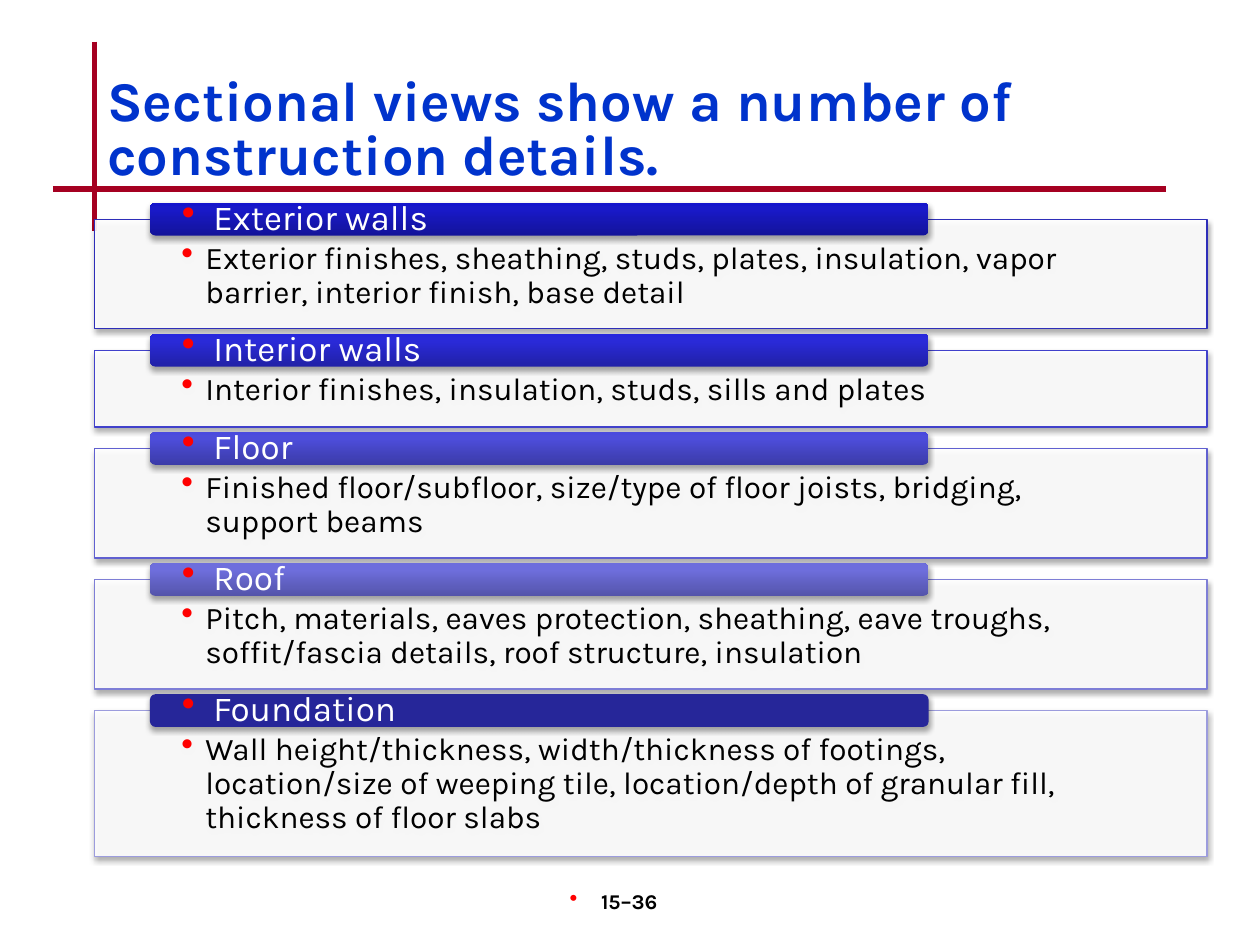
from lxml import etree
from pptx import Presentation
from pptx.dml.color import RGBColor
from pptx.enum.shapes import MSO_CONNECTOR, MSO_SHAPE
from pptx.enum.text import MSO_ANCHOR, PP_ALIGN
from pptx.oxml import parse_xml
from pptx.oxml.ns import nsdecls, qn
from pptx.util import Inches, Pt

STRAIGHT = MSO_CONNECTOR.STRAIGHT
RECTANGLE, ROUNDED = MSO_SHAPE.RECTANGLE, MSO_SHAPE.ROUNDED_RECTANGLE
TOP, MIDDLE, BOTTOM = MSO_ANCHOR.TOP, MSO_ANCHOR.MIDDLE, MSO_ANCHOR.BOTTOM
LEFT, CENTER = PP_ALIGN.LEFT, PP_ALIGN.CENTER

FONT = "Karla"
BLACK = RGBColor(0x00, 0x00, 0x00)
WHITE = RGBColor(0xFF, 0xFF, 0xFF)
TITLE_BLUE = RGBColor(0x00, 0x33, 0xCC)
RULE_RED = RGBColor(0xA5, 0x00, 0x21)
BULLET_RED = RGBColor(0xFF, 0x00, 0x00)

PANEL_LEFT, PANEL_TOP, PANEL_WIDTH, PANEL_GAP = 0.75, 1.74, 8.83, 0.17
HEADER_LEFT, HEADER_WIDTH, HEADER_HEIGHT = 1.19, 6.18, 0.26

# heading, details, panel height, panel outline, header fill (from bottom to top)
SECTIONS = [
    ("Exterior walls",
     "Exterior finishes, sheathing, studs, plates, insulation, vapor barrier, "
     "interior finish, base detail",
     0.87, RGBColor(0x2E, 0x2E, 0xB9), ("13139A", "1919C8", "1515CC")),
    ("Interior walls",
     "Interior finishes, insulation, studs, sills and plates",
     0.61, RGBColor(0x41, 0x41, 0xCB), ("2121A7", "2A2AD9", "2727DD")),
    ("Floor",
     "Finished floor/subfloor, size/type of floor joists, bridging, support beams",
     0.87, RGBColor(0x60, 0x60, 0xD0), ("3B3BA8", "4D4DDA", "4A4ADE")),
    ("Roof",
     "Pitch, materials, eaves protection, sheathing, eave troughs, "
     "soffit/fascia details, roof structure, insulation",
     0.87, RGBColor(0x7E, 0x7E, 0xD6), ("5454AA", "6E6EDC", "6C6CDF")),
    ("Foundation",
     "Wall height/thickness, width/thickness of footings, location/size of "
     "weeping tile, location/depth of granular fill, thickness of floor slabs",
     1.16, RGBColor(0x9C, 0x9C, 0xDD), ("262699",) * 3),
]


class SlideBuilder:
    def __init__(self, slide, font):
        self.slide = slide
        self.font = font

    def set_text(self, shape, text, size, color, bold=False, align=LEFT, anchor=TOP,
                 insets=(0.1, 0.05, 0.1, 0.05), spacing=1.0, indent=None):
        """Fill a shape with one paragraph; an indent makes it a bullet."""
        frame = shape.text_frame
        frame.word_wrap = True
        frame.vertical_anchor = anchor
        (frame.margin_left, frame.margin_top,
         frame.margin_right, frame.margin_bottom) = map(Inches, insets)
        frame.text = text
        paragraph = frame.paragraphs[0]
        paragraph.alignment = align
        paragraph.line_spacing = spacing
        paragraph.space_before = Pt(0)
        if indent:
            self.add_bullet(paragraph, indent)
        font = paragraph.runs[0].font
        font.name, font.size, font.bold = self.font, Pt(size), bold
        font.color.rgb = color

    def add_bullet(self, paragraph, indent):
        properties = paragraph._p.get_or_add_pPr()
        properties.set("marL", str(Inches(indent)))
        properties.set("indent", str(-Inches(indent)))
        color = etree.SubElement(properties, qn("a:buClr"))
        etree.SubElement(color, qn("a:srgbClr"), val=str(BULLET_RED))
        etree.SubElement(properties, qn("a:buSzPct"), val="110000")
        etree.SubElement(properties, qn("a:buChar"), char="•")

    def add_title(self, text, left, top, width, height):
        title = self.slide.shapes.title
        title.left, title.top = Inches(left), Inches(top)
        title.width, title.height = Inches(width), Inches(height)
        self.set_text(title, text, 32, TITLE_BLUE, bold=True, anchor=BOTTOM,
                      spacing=0.8)

    def add_rule(self, x1, y1, x2, y2):
        rule = self.slide.shapes.add_connector(
            STRAIGHT, Inches(x1), Inches(y1), Inches(x2), Inches(y2))
        rule.line.color.rgb = RULE_RED
        rule.line.width = Pt(3)
        etree.SubElement(rule._element.spPr, qn("a:effectLst"))

    def add_box(self, kind, left, top, width, height):
        return self.slide.shapes.add_shape(
            kind, Inches(left), Inches(top), Inches(width), Inches(height))

    def cast_shadow(self, shape):
        """Add a soft shadow below; call after fill and line are set."""
        shape._element.spPr.append(parse_xml(
            f'<a:effectLst {nsdecls("a")}>'
            f'<a:outerShdw blurRad="{Pt(3.1)}" dist="{Pt(1.8)}" dir="5400000" '
            'rotWithShape="0"><a:srgbClr val="000000"><a:alpha val="35000"/>'
            '</a:srgbClr></a:outerShdw></a:effectLst>'))

    def add_panel(self, details, top, height, outline):
        panel = self.add_box(RECTANGLE, PANEL_LEFT, top, PANEL_WIDTH, height)
        panel.fill.solid()
        panel.fill.fore_color.rgb = WHITE
        fill_color = panel._element.spPr.find(qn("a:solidFill"))[0]
        etree.SubElement(fill_color, qn("a:alpha"), val="90000")
        panel.line.color.rgb = outline
        panel.line.width = Pt(0.75)
        self.cast_shadow(panel)
        self.set_text(panel, details, 18, BLACK, insets=(0.69, 0.18, 0.69, 0.14),
                      spacing=0.9, indent=0.19)

    def add_header(self, heading, middle, shades):
        header = self.add_box(ROUNDED, HEADER_LEFT, middle - HEADER_HEIGHT / 2,
                              HEADER_WIDTH, HEADER_HEIGHT)
        if len(set(shades)) == 1:
            header.fill.solid()
            header.fill.fore_color.rgb = RGBColor.from_string(shades[0])
        else:
            stops = "".join(
                f'<a:gs pos="{position}"><a:srgbClr val="{shade}"/></a:gs>'
                for position, shade in zip((0, 80000, 100000), shades))
            header._element.spPr.append(parse_xml(
                f'<a:gradFill {nsdecls("a")} rotWithShape="1"><a:gsLst>{stops}'
                '</a:gsLst><a:lin ang="16200000" scaled="0"/></a:gradFill>'))
        header.line.fill.background()
        self.cast_shadow(header)
        self.set_text(header, heading, 20, WHITE, anchor=MIDDLE,
                      insets=(0.24, 0, 0.24, 0), spacing=0.9, indent=0.25)

    def add_page_number(self, text, left, top, width, height):
        box = self.slide.shapes.add_textbox(
            Inches(left), Inches(top), Inches(width), Inches(height))
        self.set_text(box, text, 12, BLACK, bold=True, align=CENTER,
                      insets=(0.1, 0.05, 0.28, 0.05), indent=0.25)


def main():
    presentation = Presentation()
    presentation.slide_width, presentation.slide_height = Inches(10), Inches(7.5)
    title_only = presentation.slide_layouts[5]
    builder = SlideBuilder(presentation.slides.add_slide(title_only), FONT)

    builder.add_rule(0.75, 0.33, 0.75, 1.83)
    builder.add_rule(0.42, 1.5, 9.25, 1.5)
    builder.add_title("Sectional views show a number of construction details.",
                      0.75, 0.53, 8.5, 1)
    top = PANEL_TOP
    for heading, details, height, outline, shades in SECTIONS:
        builder.add_panel(details, top, height, outline)
        builder.add_header(heading, top, shades)
        top += height + PANEL_GAP
    builder.add_page_number("15–36", 3.92, 7, 2.08, 0.5)

    presentation.save("out.pptx")


if __name__ == "__main__":
    main()
